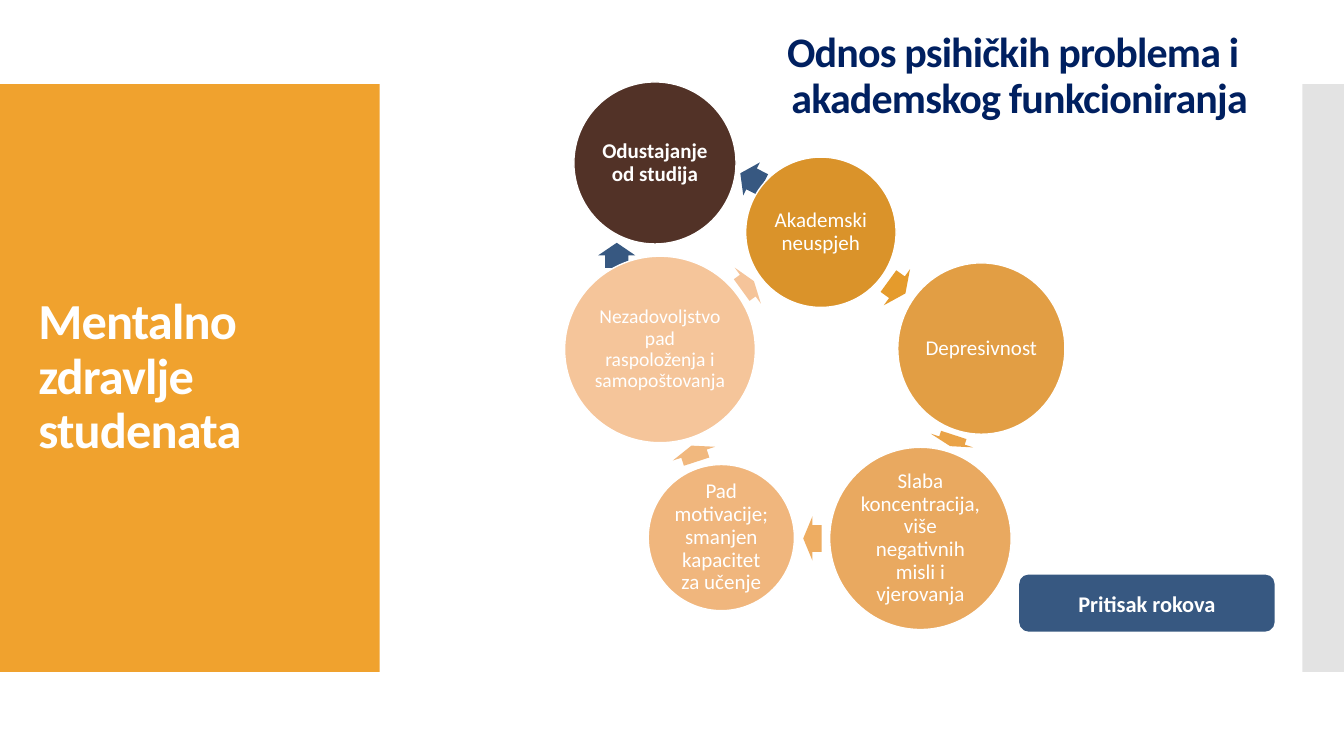
from lxml.etree import SubElement
from pptx import Presentation
from pptx.dml.color import RGBColor
from pptx.enum.shapes import MSO_SHAPE
from pptx.enum.text import MSO_ANCHOR, MSO_AUTO_SIZE, PP_ALIGN
from pptx.oxml.ns import qn
from pptx.util import Inches, Pt

WHITE = RGBColor(0xFF, 0xFF, 0xFF)
NAVY = RGBColor(0x00, 0x20, 0x60)
BLUE = RGBColor(0x37, 0x58, 0x81)
BROWN = RGBColor(0x52, 0x32, 0x27)
ORANGE = RGBColor(0xF0, 0xA2, 0x2E)
GREY = RGBColor(0xC8, 0xC8, 0xC8)

# Label, centre column, centre row, width, height, size, colour
CYCLE = [
    ("Akademski neuspjeh", 97.7, 27.65, 17.9, 17.9, 15, RGBColor(0xDA, 0x93, 0x2A)),
    ("Depresivnost", 116.8, 41.5, 19.9, 20.4, 15, RGBColor(0xE2, 0x9E, 0x44)),
    ("Slaba koncentracija, više negativnih misli i vjerovanja",
     109.55, 64.1, 21.6, 21.7, 15, RGBColor(0xE9, 0xA9, 0x60)),
    ("Pad motivacije; smanjen kapacitet za učenje",
     85.85, 64, 17.4, 17.4, 15, RGBColor(0xF0, 0xB6, 0x7D)),
    ("Nezadovoljstvo pad raspoloženja i samopoštovanja",
     78.55, 41.6, 22.7, 22.2, 14, RGBColor(0xF5, 0xC5, 0x9A)),
]
# Centre column, centre row, length, colour of the arrow leaving each circle
CYCLE_ARROWS = [
    (106.75, 34.2, 2.5, RGBColor(0xE5, 0x9B, 0x2C)),
    (113.3, 52.45, 1.4, RGBColor(0xEA, 0xA3, 0x47)),
    (96.7, 64.1, 2.2, RGBColor(0xEE, 0xAD, 0x62)),
    (82.6, 54, 2, RGBColor(0xF1, 0xB8, 0x7E)),
    (89, 34, 1.8, RGBColor(0xF5, 0xC4, 0x9A)),
]
# Centre column, centre row, rotation
EXIT_ARROWS = [(89.45, 21.3, 26.7), (73.4, 30.4, 90)]


class SlideBuilder:
    """Draws on a grid of 160 columns and 90 rows."""

    font_name = "Calibri"

    def __init__(self, deck):
        self.cell = deck.slide_height / 90
        self.page = deck.slides.add_slide(deck.slide_layouts[5])

    def grid(self, *lengths):
        return [round(length * self.cell) for length in lengths]

    def set_text(self, box, text, size, color=WHITE, bold=False, align=PP_ALIGN.CENTER,
                 spacing=0.9, tracking=0, inset=0.1):
        frame = box.text_frame
        frame.word_wrap = True
        frame.auto_size = MSO_AUTO_SIZE.NONE
        frame.vertical_anchor = MSO_ANCHOR.MIDDLE
        frame.margin_left = frame.margin_right = Inches(inset)
        frame.margin_top = frame.margin_bottom = Inches(inset / 2)
        para = frame.paragraphs[0]
        para.text = text
        para.alignment = align
        para.line_spacing = spacing
        para.font.name = self.font_name
        para.font.size = Pt(size)
        para.font.bold = bold
        para.font.color.rgb = color
        if tracking:
            para._p.pPr.find(qn("a:defRPr")).set("spc", str(round(tracking * 100)))

    def title(self, left, top, width, height, text):
        box = self.page.shapes.title
        box.left, box.top, box.width, box.height = self.grid(left, top, width, height)
        self.page.shapes._spTree.append(box._element)  # in front of the panel
        self.set_text(box, text, 36, bold=True, align=PP_ALIGN.LEFT, tracking=-0.6)

    def heading(self, left, top, width, height, text):
        box = self.page.shapes.add_textbox(*self.grid(left, top, width, height))
        self.set_text(box, text, 30, NAVY, True, PP_ALIGN.RIGHT, tracking=-0.6)

    def shape(self, kind, left, top, width, height, color):
        shape = self.page.shapes.add_shape(kind, *self.grid(left, top, width, height))
        shape.shadow.inherit = False
        shape.fill.solid()
        shape.fill.fore_color.rgb = color
        shape.line.fill.background()
        return shape

    def panel(self, left, top, width, height, color, opacity=100):
        panel = self.shape(MSO_SHAPE.RECTANGLE, left, top, width, height, color)
        if opacity < 100:
            tint = panel._element.spPr.find(qn("a:solidFill"))[0]
            SubElement(tint, qn("a:alpha")).set("val", str(opacity * 1000))

    def circle(self, label, column, row, width, height, size, color, bold=False):
        circle = self.shape(MSO_SHAPE.OVAL, column - width / 2, row - height / 2,
                            width, height, color)
        circle.line.color.rgb = WHITE
        circle.line.width = Pt(1)
        self.set_text(circle, label, size, bold=bold, inset=0.02)

    def arrow(self, kind, column, row, length, breadth, rotation, shaft, color):
        arrow = self.shape(kind, column - length / 2, row - breadth / 2,
                           length, breadth, color)
        arrow.adjustments[0] = shaft
        arrow.rotation = rotation

    def badge(self, left, top, width, height, text):
        badge = self.shape(MSO_SHAPE.ROUNDED_RECTANGLE, left, top, width, height, BLUE)
        self.set_text(badge, text, 16, bold=True, spacing=1.0)


def main():
    deck = Presentation()
    deck.slide_width, deck.slide_height = Inches(13.33), Inches(7.5)
    slide = SlideBuilder(deck)

    slide.panel(0, 10, 45.2, 70, ORANGE)
    slide.panel(155, 10, 5, 70, GREY, opacity=50)
    slide.title(3.36, 14.8, 38.6, 60.4, "Mentalno\vzdravlje\vstudenata")
    slide.heading(86, 3.7, 63.7, 10.9,
                  "Odnos psihičkih problema i \vakademskog funkcioniranja")

    slide.circle("Odustajanje od studija", 77.95, 19.4, 19.3, 19.3, 15, BROWN, bold=True)
    slide.badge(121.3, 68.4, 30.4, 6.8, "Pritisak rokova")
    for column, row, rotation in EXIT_ARROWS:
        slide.arrow(MSO_SHAPE.LEFT_ARROW, column, row, 3, 4.4, rotation, 0.63, BLUE)

    for step, (circle, (column, row, length, color)) in enumerate(zip(CYCLE, CYCLE_ARROWS)):
        slide.circle(*circle)
        slide.arrow(MSO_SHAPE.RIGHT_ARROW, column, row, length, 5.3,
                    36 + step * 360 / len(CYCLE), 0.6, color)

    deck.save("out.pptx")


if __name__ == "__main__":
    main()
